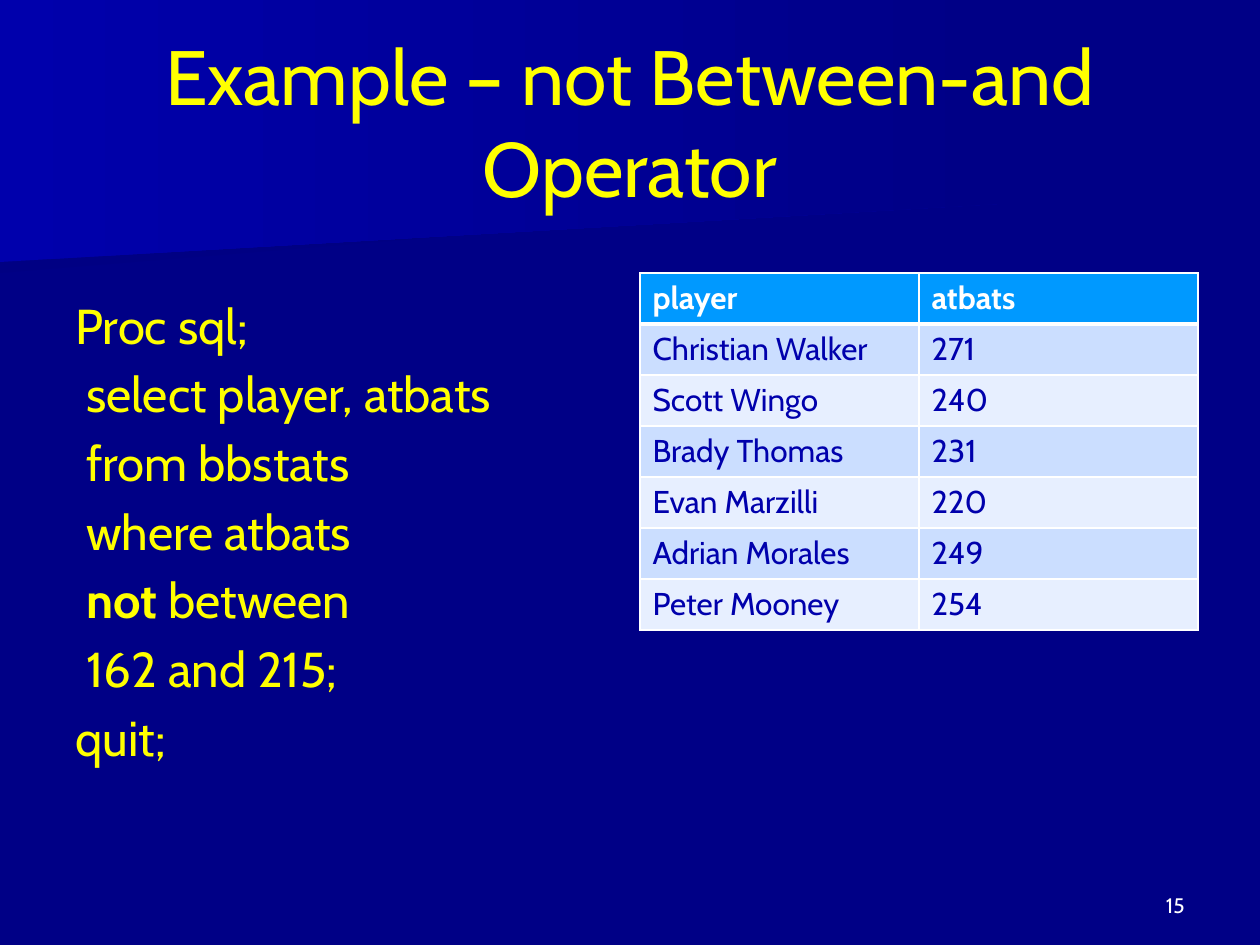
import pptx
import pptx.util
import pptx.dml.color
import pptx.enum.text
import pptx.oxml
import pptx.oxml.ns

PX = 914400 // 126
FONT = "Cabin"
COLORS = {
    "background": "000086", "shade": "000083", "glow": "0000AC",
    "yellow": "FFFF00", "white": "FFFFFF", "header": "0099FF",
    "odd": "CBDEFF", "even": "E7EFFF", "player": "0000AC",
}
TITLE = "Example – not Between-and Operator"
CODE = [
    [("Proc sql;", False)],
    [(" select player, atbats", False)],
    [(" from bbstats", False)],
    [(" where atbats", False)],
    [(" ", False), ("not", True), (" between", False)],
    [(" 162 and 215;", False)],
    [("quit;", False)],
]
PLAYERS = [
    ("player", "atbats"),
    ("Christian Walker", "271"),
    ("Scott Wingo", "240"),
    ("Brady Thomas", "231"),
    ("Evan Marzilli", "220"),
    ("Adrian Morales", "249"),
    ("Peter Mooney", "254"),
]
BANDS = [
    ("shade", [(980, 193), (0, 273), (0, 127), (982, 127), (980, 161)]),
    ("glow", [(998, 204), (0, 262), (0, 0), (998, 0)]),
]
TITLE_BOX = (63, 42, 1134, 157)
CODE_BOX = (63, 289, 557, 550)
NUMBER_BOX = (903, 861, 294, 63)
TABLE_LEFT, TABLE_TOP, COLUMN, ROW = 640, 273, 279, 51


def px(*lengths):
    return [pptx.util.Emu(length * PX) for length in lengths]


def rgb(name):
    return pptx.dml.color.RGBColor.from_string(COLORS[name])


def add_run(paragraph, text, size, color, bold=False):
    run = paragraph.add_run()
    run.text = text
    run.font.name = FONT
    run.font.size = pptx.util.Pt(size)
    run.font.bold = bold
    run.font.color.rgb = rgb(color)


def add_band(slide, color, points):
    builder = slide.shapes.build_freeform(*points[0], scale=PX)
    builder.add_line_segments(points[1:], close=True)
    band = builder.convert_to_shape()
    band.shadow.inherit = False
    band.line.fill.background()
    band.fill.gradient()
    band.fill.gradient_angle = 0
    for stop, name in zip(band.fill.gradient_stops, (color, "background")):
        stop.color.rgb = rgb(name)


def set_borders(cell, widths):
    properties = cell._tc.get_or_add_tcPr()
    for index, (side, width) in enumerate(widths.items()):
        border = pptx.oxml.parse_xml(
            f'<a:{side} {pptx.oxml.ns.nsdecls("a")} w="{pptx.util.Pt(width)}">'
            f'<a:solidFill><a:srgbClr val="{COLORS["white"]}"/></a:solidFill></a:{side}>')
        properties.insert(index, border)


def add_players(slide):
    rows, columns = len(PLAYERS), len(PLAYERS[0])
    table = slide.shapes.add_table(
        rows, columns, *px(TABLE_LEFT, TABLE_TOP, COLUMN * columns, ROW * rows)).table
    for column in table.columns:
        column.width = px(COLUMN)[0]
    for r, values in enumerate(PLAYERS):
        table.rows[r].height = px(ROW)[0]
        header = r == 0
        for c, value in enumerate(values):
            cell = table.cell(r, c)
            cell.fill.solid()
            cell.fill.fore_color.rgb = rgb("header" if header else "odd" if r % 2 else "even")
            add_run(cell.text_frame.paragraphs[0], value, 18,
                    "white" if header else "player", header)
            set_borders(cell, {"lnL": 1, "lnR": 1, "lnT": 3 if r == 1 else 1,
                               "lnB": 3 if header else 1})


def main():
    deck = pptx.Presentation()
    deck.slide_width, deck.slide_height = px(1260, 945)
    slide = deck.slides.add_slide(deck.slide_layouts[5])
    slide.background.fill.solid()
    slide.background.fill.fore_color.rgb = rgb("background")
    for color, points in BANDS:
        add_band(slide, color, points)

    title = slide.shapes.title
    slide.shapes.element.append(title.element)
    title.left, title.top, title.width, title.height = px(*TITLE_BOX)
    heading = title.text_frame
    heading.word_wrap = True
    heading.auto_size = pptx.enum.text.MSO_AUTO_SIZE.NONE
    heading.vertical_anchor = pptx.enum.text.MSO_ANCHOR.MIDDLE
    heading.paragraphs[0].alignment = pptx.enum.text.PP_ALIGN.CENTER
    add_run(heading.paragraphs[0], TITLE, 44, "yellow")

    code = slide.shapes.add_textbox(*px(*CODE_BOX)).text_frame
    code.word_wrap = True
    for index, runs in enumerate(CODE):
        line = code.add_paragraph() if index else code.paragraphs[0]
        if index:
            line.space_before = pptx.util.Pt(5.6)
        for text, bold in runs:
            add_run(line, text, 28, "yellow", bold)

    add_players(slide)

    number = slide.shapes.add_textbox(*px(*NUMBER_BOX)).text_frame
    number.word_wrap = True
    number.vertical_anchor = pptx.enum.text.MSO_ANCHOR.BOTTOM
    number.paragraphs[0].alignment = pptx.enum.text.PP_ALIGN.RIGHT
    add_run(number.paragraphs[0], "15", 12, "white")

    deck.save("out.pptx")


if __name__ == "__main__":
    main()
